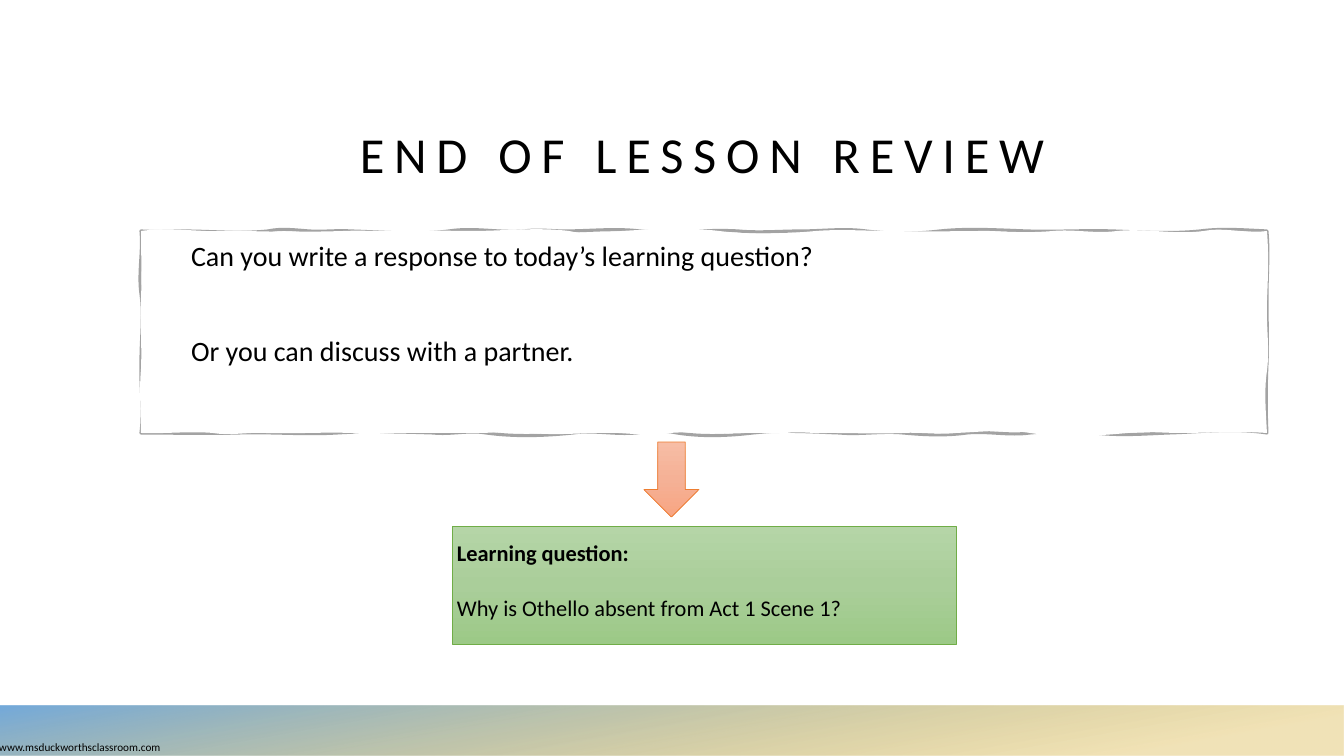
from lxml import etree
from pptx import Presentation
from pptx.dml.color import RGBColor
from pptx.enum.shapes import MSO_SHAPE
from pptx.enum.text import MSO_ANCHOR, PP_ALIGN
from pptx.oxml.ns import qn
from pptx.util import Pt

RECTANGLE, DOWN_ARROW = MSO_SHAPE.RECTANGLE, MSO_SHAPE.DOWN_ARROW
TOP, BOTTOM = MSO_ANCHOR.TOP, MSO_ANCHOR.BOTTOM
LEFT, CENTER = PP_ALIGN.LEFT, PP_ALIGN.CENTER

SLIDE_W, SLIDE_H = 1344, 756
EMU_PER_PX = 12192000 / SLIDE_W

COLORS = {
    "text": "000000", "paper": "FFFFFF", "sketch": "A3A3A3",
    "sand": "CF9B00", "sky": "5B9BD5",
    "arrow_edge": "ED7D31", "question_edge": "70AD47",
}
# Gradient stops: position %, colour, opacity %
BAND_STOPS = [(14, COLORS["sand"], 28), (100, COLORS["sky"], 85)]
ARROW_STOPS = [(0, "F7BDA5", 100), (50, "F5B196", 100), (100, "F8A582", 100)]
QUESTION_STOPS = [(0, "B5D5A7", 100), (50, "AACE9A", 100), (100, "9CC987", 100)]

# Hand-drawn frame: each side lists (end of stroke, first bend, second bend)
FRAME_LEFT, FRAME_TOP, FRAME_RIGHT, FRAME_BOTTOM = 141, 231, 1267, 433
PENCIL_SIDES = {
    "top": [(182, 1, 0), (268, 0, 3), (309, -3, -1), (351, 1, -1), (449, 1, 4),
            (524, -4, 2), (565, -2, 0), (640, 0, -3), (738, 3, -2), (801, 2, 0),
            (866, 0, -3), (940, 3, 3), (1027, -3, -1), (1113, 1, -1),
            (1200, 1, 3), (1267, -3, -1)],
    "right": [(298, 2, 0), (365, 0, 1), (433, -1, -1)],
    "bottom": [(1169, -5, -1), (1095, 1, 3), (1030, -2, -2), (967, 3, -2),
               (903, 3, 2), (839, -2, 2), (753, -1, -3), (677, 3, 4),
               (636, -3, -2), (573, 2, -3), (486, 3, 4), (433, -3, 2),
               (337, -1, -2), (239, 2, -1), (141, 1, 0)],
    "left": [(361, 3, -1), (294, 0, 3), (231, -3, 2)],
}
PAPER_SIDES = {
    "top": [(205, -3, -1), (246, 1, -1), (344, 1, 1), (407, -1, 1), (472, -1, 0),
            (569, 0, -4), (622, 4, 2), (719, -2, -4), (816, 4, 3), (892, -2, 0),
            (989, 1, 0), (1053, 1, 2), (1117, -2, 3), (1204, -3, 4), (1267, -4, 3)],
    "right": [(302, 2, 1), (371, -1, 3), (433, -3, -1)],
    "bottom": [(1180, -2, 0), (1128, 0, -2), (1030, 3, 5), (956, -4, -1),
               (903, 2, -1), (828, 1, 0), (786, 1, -2), (745, 2, -1),
               (670, 2, -2), (618, 3, 1), (531, -1, 3), (479, -3, 0),
               (392, 0, 0), (351, 1, 2), (265, -1, 1), (213, -1, 3), (141, -2, 1)],
    "left": [(369, 0, -2), (298, 1, -1), (231, 1, 0)],
}


def px(value):
    return round(value * EMU_PER_PX)


def set_fill(shape, color):
    shape.fill.solid()
    shape.fill.fore_color.rgb = RGBColor.from_string(color)


def set_line(shape, color=None, width=0):
    if color is None:
        shape.line.fill.background()
    else:
        shape.line.color.rgb = RGBColor.from_string(color)
        shape.line.width = Pt(width)


def set_gradient(shape, stops, angle):
    """Fill with a linear gradient whose angle runs clockwise in degrees."""
    shape.fill.background()
    no_fill = shape._element.spPr.find(qn("a:noFill"))
    gradient = etree.Element(qn("a:gradFill"), rotWithShape="1")
    stop_list = etree.SubElement(gradient, qn("a:gsLst"))
    for position, color, opacity in stops:
        stop = etree.SubElement(stop_list, qn("a:gs"), pos=str(position * 1000))
        shade = etree.SubElement(stop, qn("a:srgbClr"), val=color)
        if opacity < 100:
            etree.SubElement(shade, qn("a:alpha"), val=str(opacity * 1000))
    etree.SubElement(gradient, qn("a:lin"), ang=str(angle * 60000), scaled="0")
    no_fill.getparent().replace(no_fill, gradient)


def add_box(slide, kind, box, edge=None):
    shape = slide.shapes.add_shape(kind, *map(px, box))
    shape.shadow.inherit = False
    set_line(shape, edge, 0.5)
    return shape


def write_text(shape, lines, size, align=LEFT, anchor=TOP, inset=(0, 0), wrap=True,
               line_spacing=1.0, gap=0, bold_first=False, tracking=0):
    """Write one paragraph per line; inset is left and top in px, gap in points."""
    frame = shape.text_frame
    layout = {"word_wrap": wrap, "vertical_anchor": anchor,
              "margin_left": px(inset[0]), "margin_top": px(inset[1]),
              "margin_right": 0, "margin_bottom": 0}
    for name, value in layout.items():
        setattr(frame, name, value)
    for index, line in enumerate(lines):
        paragraph = frame.add_paragraph() if index else frame.paragraphs[0]
        paragraph.alignment = align
        paragraph.line_spacing = line_spacing
        if index:
            paragraph.space_before = Pt(gap)
        run = paragraph.add_run()
        run.text = line
        style = {"name": "Calibri", "size": Pt(size),
                 "bold": bold_first and index == 0}
        for name, value in style.items():
            setattr(run.font, name, value)
        run.font.color.rgb = RGBColor.from_string(COLORS["text"])
        if tracking:
            run._r.get_or_add_rPr().set("spc", str(tracking * 100))


def add_point(parent, x, y):
    etree.SubElement(parent, qn("a:pt"), x=str(px(x - FRAME_LEFT)),
                     y=str(px(y - FRAME_TOP)))


def add_wavy_path(path_list, sides, **flags):
    """Trace four wavy sides clockwise from the top left corner as curves."""
    outline = etree.SubElement(path_list, qn("a:path"),
                               w=str(px(FRAME_RIGHT - FRAME_LEFT)),
                               h=str(px(FRAME_BOTTOM - FRAME_TOP)), **flags)
    add_point(etree.SubElement(outline, qn("a:moveTo")), FRAME_LEFT, FRAME_TOP)
    edges = [("top", FRAME_LEFT, FRAME_TOP), ("right", FRAME_TOP, FRAME_RIGHT),
             ("bottom", FRAME_RIGHT, FRAME_BOTTOM), ("left", FRAME_BOTTOM, FRAME_LEFT)]
    for side, start, base in edges:
        for end, first, second in sides[side]:
            curve = etree.SubElement(outline, qn("a:cubicBezTo"))
            for share, sideways in ((1 / 3, first), (2 / 3, second), (1, 0)):
                along, across = start + (end - start) * share, base + sideways
                if side in ("top", "bottom"):
                    add_point(curve, along, across)
                else:
                    add_point(curve, across, along)
            start = end
    etree.SubElement(outline, qn("a:close"))


def add_review_frame(slide, lines):
    """Draw a pencil outline partly hidden by a wavy sheet, with text on it."""
    builder = slide.shapes.build_freeform(px(FRAME_LEFT), px(FRAME_TOP), scale=1.0)
    corners = [(FRAME_RIGHT, FRAME_TOP), (FRAME_RIGHT, FRAME_BOTTOM),
               (FRAME_LEFT, FRAME_BOTTOM)]
    builder.add_line_segments([(px(x), px(y)) for x, y in corners], close=True)
    sheet = builder.convert_to_shape()
    sheet.shadow.inherit = False
    path_list = next(sheet._element.iter(qn("a:pathLst")))
    path_list.remove(path_list[0])
    add_wavy_path(path_list, PENCIL_SIDES, fill="none")
    add_wavy_path(path_list, PAPER_SIDES, stroke="0")
    set_fill(sheet, COLORS["paper"])
    set_line(sheet, COLORS["sketch"], 2.25)
    write_text(sheet, lines, 20, inset=(50, 1), line_spacing=1.2, gap=39)


def main():
    presentation = Presentation()
    presentation.slide_width, presentation.slide_height = px(SLIDE_W), px(SLIDE_H)
    slide = presentation.slides.add_slide(presentation.slide_layouts[6])

    band = add_box(slide, RECTANGLE, (0, 706, SLIDE_W, 50))
    set_gradient(band, BAND_STOPS, 260)
    address = slide.shapes.add_textbox(*map(px, (-10, 735, 202, 24)))
    write_text(address, ["www.msduckworthsclassroom.com"], 8, inset=(9, 5))

    title = add_box(slide, RECTANGLE, (138, 48, 1129, 136))
    set_fill(title, COLORS["paper"])
    write_text(title, ["END OF LESSON REVIEW"], 36, align=CENTER, anchor=BOTTOM,
               tracking=7)
    add_review_frame(slide, ["Can you write a response to today’s learning question?",
                             "Or you can discuss with a partner."])

    arrow = add_box(slide, DOWN_ARROW, (644, 442, 55, 75), COLORS["arrow_edge"])
    set_gradient(arrow, ARROW_STOPS, 90)
    question = add_box(slide, RECTANGLE, (452, 526, 504, 118), COLORS["question_edge"])
    set_gradient(question, QUESTION_STOPS, 90)
    write_text(question, ["Learning question:",
                          "Why is Othello absent from Act 1 Scene 1?"], 16,
               inset=(5, 0), line_spacing=1.5, gap=10, bold_first=True)

    presentation.save("out.pptx")


if __name__ == "__main__":
    main()
